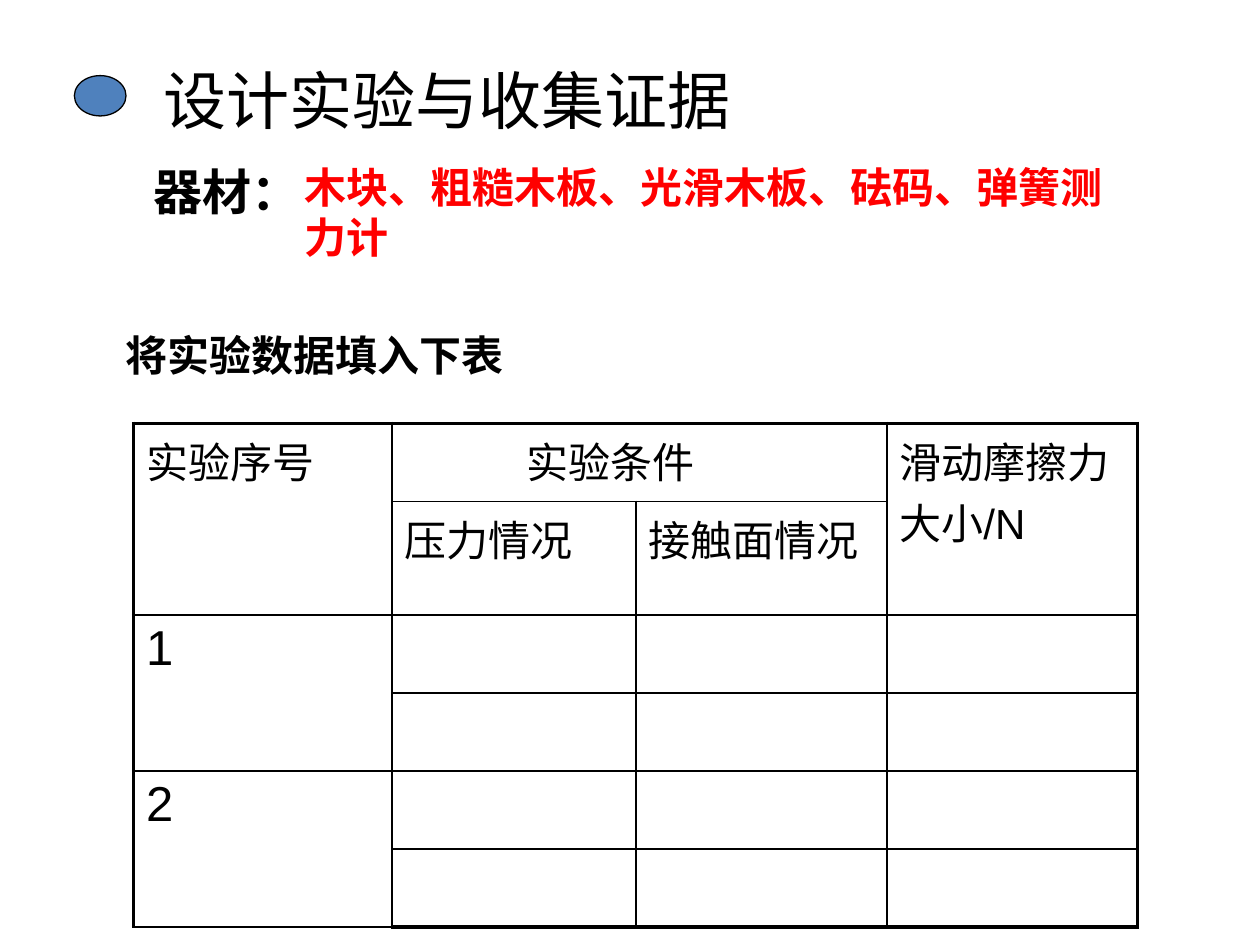
from dataclasses import dataclass

from lxml import etree
from pptx import Presentation
from pptx.dml.color import RGBColor
from pptx.enum import shapes, text
from pptx.oxml.ns import qn
from pptx.util import Inches, Pt


@dataclass(frozen=True)
class Theme:
    black: RGBColor = RGBColor(0, 0, 0)
    red: RGBColor = RGBColor(255, 0, 0)
    blue: RGBColor = RGBColor(0x4F, 0x81, 0xBD)
    head: str = "Calibri"
    body: str = "Arial"
    title: int = 36
    large: int = 28
    text: int = 24
    thin: float = 1
    thick: float = 2.25


@dataclass(frozen=True)
class Label:
    words: str
    left: float
    top: float
    width: float
    height: float
    size: int
    color: RGBColor


@dataclass(frozen=True)
class Entry:
    """A filled table cell and the rows and columns it covers."""
    words: str
    row: int
    col: int
    rows: int = 1
    cols: int = 1
    size: int = 24
    inset: float = 0.1


T = Theme()
LABELS = [
    Label("器材：", 1.12, 1.23, 1.03, 0.57, T.large, T.black),
    Label("木块、粗糙木板、光滑木板、砝码、弹簧测力计",
          2.32, 1.23, 6.78, 0.91, T.text, T.red),
    Label("将实验数据填入下表", 0.9, 2.57, 3.62, 0.5, T.text, T.black),
]
COLS = [2.05, 1.94, 1.99, 1.99]
ROWS = [0.62, 0.9, 0.62, 0.62, 0.62, 0.62]
ENTRIES = [
    Entry("实验序号", 0, 0, rows=2),
    Entry("实验条件", 0, 1, cols=2, inset=1.07),
    Entry("滑动摩擦力大小/N", 0, 3, rows=2),
    Entry("压力情况", 1, 1),
    Entry("接触面情况", 1, 2),
    Entry("1", 2, 0, rows=2, size=T.large),
    Entry("2", 4, 0, rows=2, size=T.large),
]


def place(shape, left: float, top: float, width: float, height: float) -> None:
    shape.left, shape.top = Inches(left), Inches(top)
    shape.width, shape.height = Inches(width), Inches(height)


def style(frame, name: str, size: int, color: RGBColor, bold: bool = False) -> None:
    for para in frame.paragraphs:
        para.alignment = text.PP_ALIGN.LEFT
        for run in para.runs:
            font = run.font
            font.name, font.size, font.bold = name, Pt(size), bold
            font.color.rgb = color


def set_asian(frame, name: str) -> None:
    """Use the named font for Chinese characters too."""
    for para in frame.paragraphs:
        for run in para.runs:
            props = run._r.get_or_add_rPr()
            etree.SubElement(props, qn("a:ea"), typeface=name)


def add_title(slide) -> None:
    title = slide.shapes.title
    place(title, 1.2, 0.44, 5.61, 1.31)
    frame = title.text_frame
    frame.text = "设计实验与收集证据"
    frame.vertical_anchor = text.MSO_ANCHOR.TOP
    frame.auto_size = text.MSO_AUTO_SIZE.NONE
    style(frame, T.head, T.title, T.black)
    set_asian(frame, T.head)


def add_dot(slide) -> None:
    dot = slide.shapes.add_shape(
        shapes.MSO_SHAPE.OVAL, Inches(0.59), Inches(0.6), Inches(0.41), Inches(0.32))
    dot.shadow.inherit = False
    dot.fill.solid()
    dot.fill.fore_color.rgb = T.blue
    dot.line.color.rgb = T.black
    dot.line.width = Pt(0.75)


def add_label(slide, label: Label) -> None:
    box = slide.shapes.add_textbox(
        Inches(label.left), Inches(label.top), Inches(label.width), Inches(label.height))
    frame = box.text_frame
    frame.word_wrap = True
    frame.text = label.words
    style(frame, T.head, label.size, label.color, bold=True)
    set_asian(frame, T.head)


def set_border(cell, sides: dict[str, float]) -> None:
    """Draw each side (L, R, T, B) at its width in points."""
    props = cell._tc.get_or_add_tcPr()
    for spot, (side, width) in enumerate(sides.items()):
        line = etree.Element(qn(f"a:ln{side}"), w=str(Pt(width)))
        fill = etree.SubElement(line, qn("a:solidFill"))
        etree.SubElement(fill, qn("a:srgbClr"), val=str(T.black))
        props.insert(spot, line)


def add_grid(slide) -> None:
    frame = slide.shapes.add_table(
        len(ROWS), len(COLS), Inches(1.06), Inches(3.36),
        Inches(sum(COLS)), Inches(sum(ROWS)))
    table = frame.table
    table.first_row = table.horz_banding = False
    for col, width in zip(table.columns, COLS):
        col.width = Inches(width)
    for row, height in zip(table.rows, ROWS):
        row.height = Inches(height)

    for r in range(len(ROWS)):
        for c in range(len(COLS)):
            cell = table.cell(r, c)
            cell.fill.background()
            outer = {"L": c == 0, "R": c == len(COLS) - 1,
                     "T": r == 0, "B": r == len(ROWS) - 1}
            set_border(cell, {side: T.thick if edge else T.thin
                              for side, edge in outer.items()})

    for entry in ENTRIES:
        cell = table.cell(entry.row, entry.col)
        if entry.rows * entry.cols > 1:
            cell.merge(table.cell(entry.row + entry.rows - 1,
                                  entry.col + entry.cols - 1))
        cell.margin_left = Inches(entry.inset)
        cell.text_frame.text = entry.words
        style(cell.text_frame, T.body, entry.size, T.black)


def main() -> None:
    deck = Presentation()
    deck.slide_width, deck.slide_height = Inches(10), Inches(7.5)
    slide = deck.slides.add_slide(deck.slide_layouts[5])
    add_dot(slide)
    add_title(slide)
    for label in LABELS:
        add_label(slide, label)
    add_grid(slide)
    deck.save("out.pptx")


if __name__ == "__main__":
    main()
